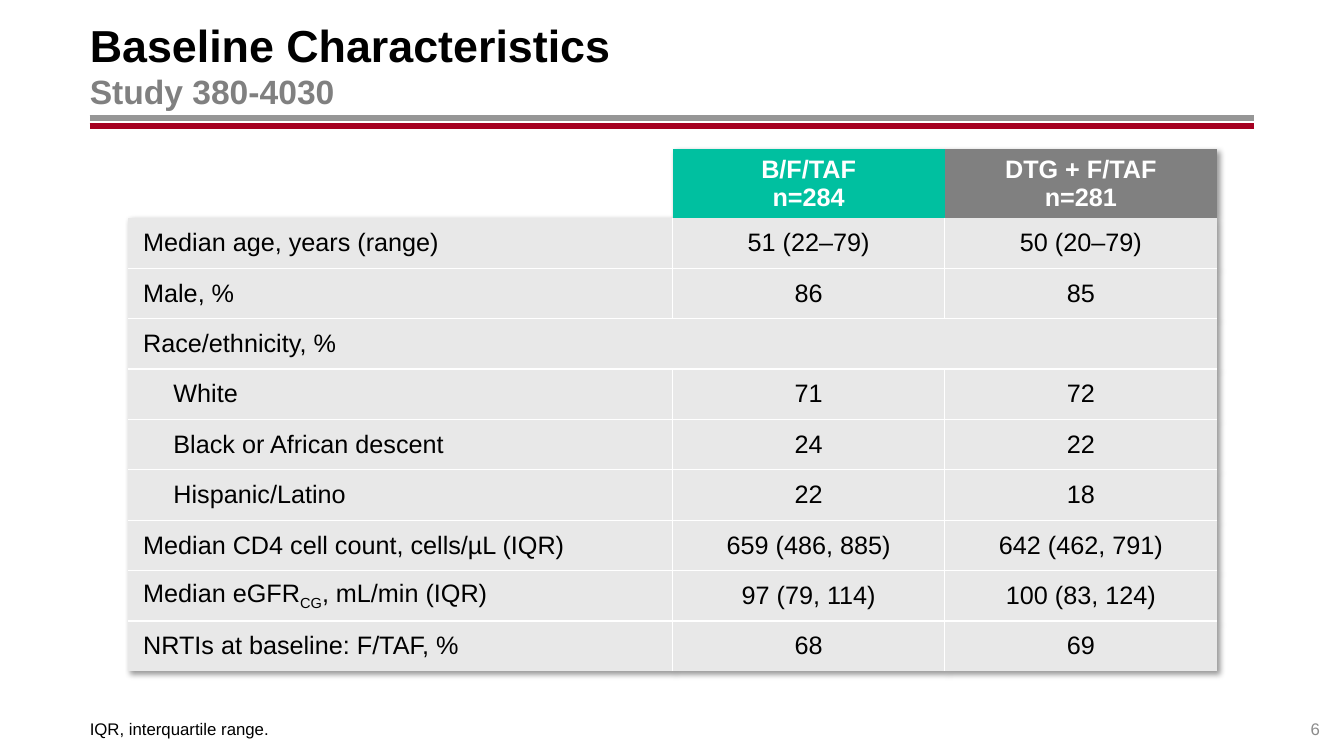
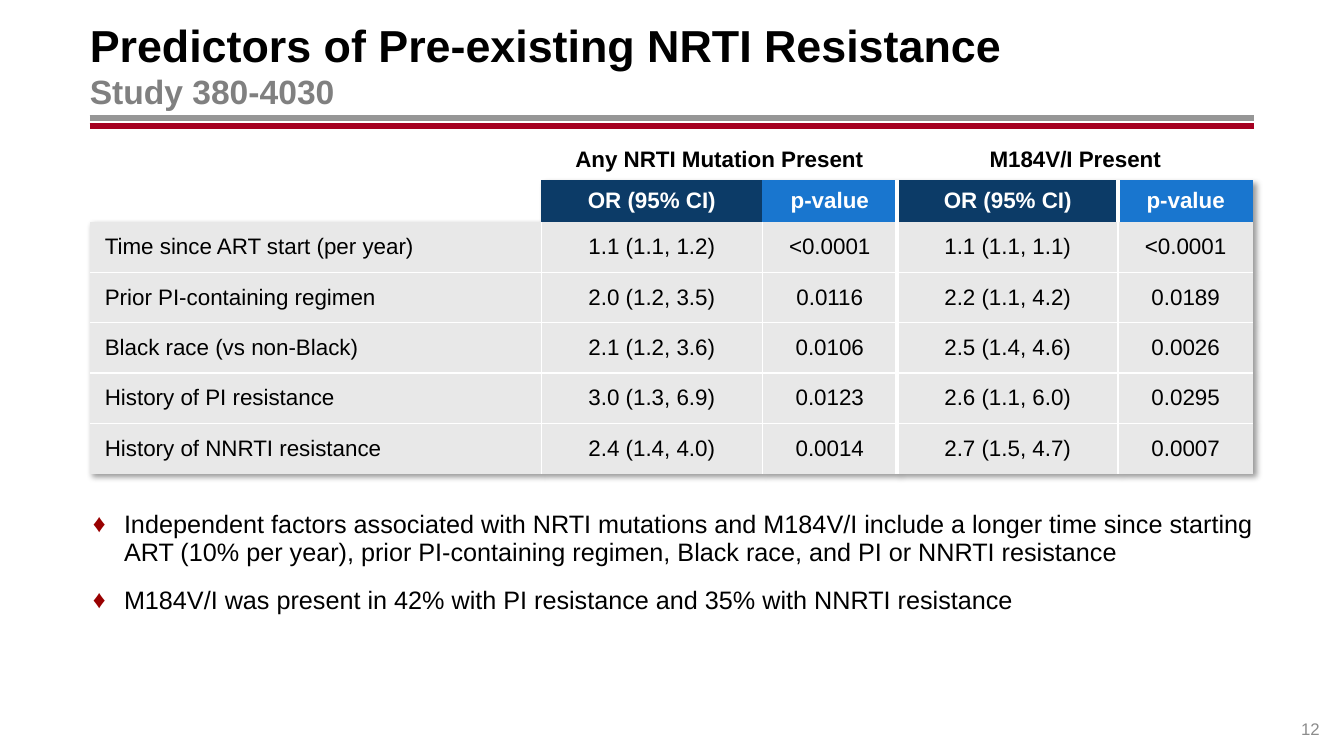
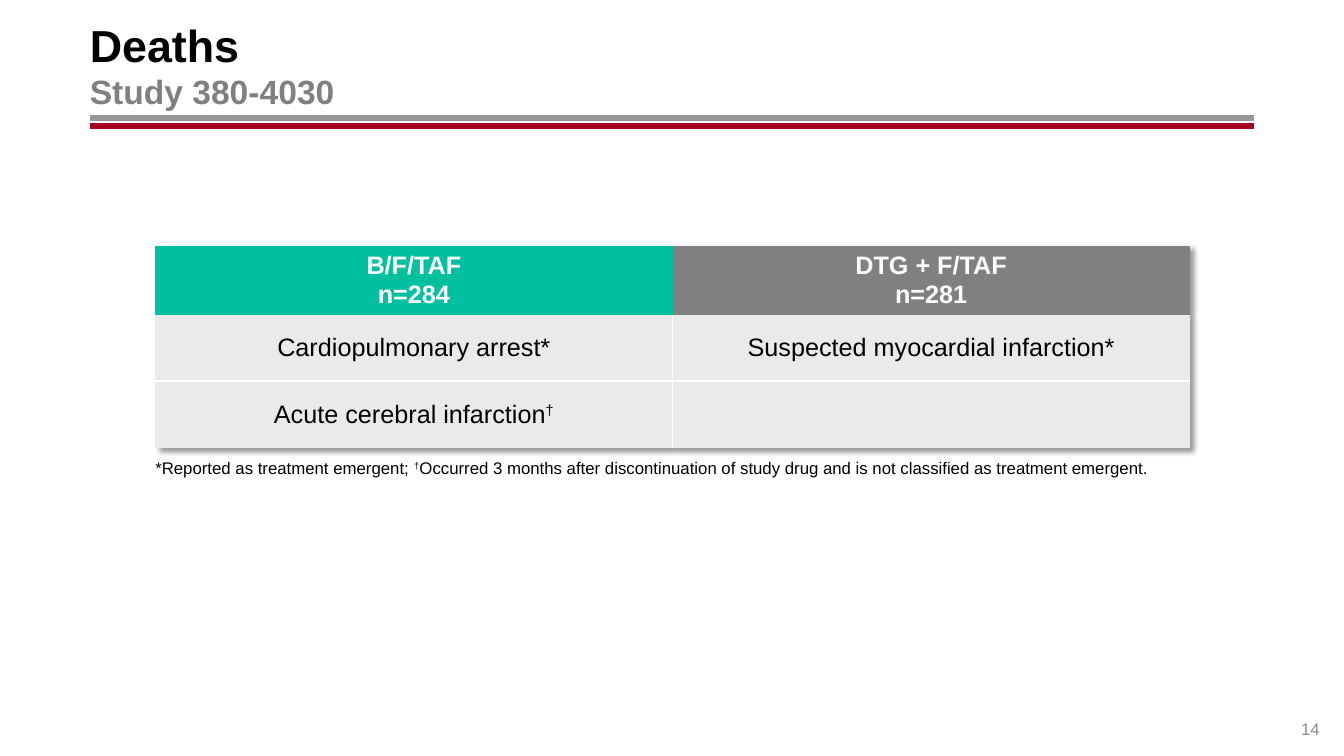
import dataclasses

import lxml.etree
import pptx
import pptx.dml.color
import pptx.enum.shapes
import pptx.enum.text
import pptx.oxml
import pptx.oxml.ns
import pptx.util

Inches = pptx.util.Inches
Pt = pptx.util.Pt
qn = pptx.oxml.ns.qn
ALIGN = pptx.enum.text.PP_ALIGN
ANCHOR = pptx.enum.text.MSO_ANCHOR


@dataclasses.dataclass(frozen=True)
class Theme:
    font: str = "Arial"
    text: str = "000000"
    white: str = "FFFFFF"
    gray: str = "808080"
    number: str = "8C8C8C"
    rule_gray: str = "969696"
    rule_red: str = "A50021"
    bullet: str = "990000"
    teal: str = "00C0A0"
    navy: str = "0C3B67"
    blue: str = "1976CF"
    cell: str = "E8E8E8"
    cell_light: str = "EAEAEA"
    title: int = 32
    subtitle: int = 24
    body: int = 18
    compact: int = 16
    note: int = 12
    rule: float = 4.25


@dataclasses.dataclass(frozen=True)
class Head:
    text: str = ""
    fill: str = ""
    span: int = 1


T = Theme()
LEFT, WIDTH = 0.89, 11.55
SUBTITLE = "Study 380-4030"
NO_STYLE = "{2D5ABB26-0587-4C30-8999-92F81FD0307C}"
ARMS = [Head("B/F/TAF\nn=284", T.teal), Head("DTG + F/TAF\nn=281", T.gray)]


def rgb(value):
    return pptx.dml.color.RGBColor.from_string(value)


def add_xml(parent, tag, **attrs):
    el = lxml.etree.SubElement(parent, qn(tag))
    for name, value in attrs.items():
        el.set(name, str(value))
    return el


def add_run(p, text, size, color, bold=False, baseline=0):
    r = p.add_run()
    r.text = text
    r.font.name = T.font
    r.font.size = Pt(size)
    r.font.bold = bold
    r.font.color.rgb = rgb(color)
    if baseline:
        r.font._element.set("baseline", str(baseline * 1000))


def add_runs(p, content, size, color, bold=False):
    runs = [(content, 0)] if isinstance(content, str) else content
    for text, baseline in runs:
        add_run(p, text, size, color, bold, baseline)


def add_text(slide, box, anchor=ANCHOR.TOP):
    sp = slide.shapes.add_textbox(*map(Inches, box))
    tf = sp.text_frame
    tf.word_wrap = True
    tf.vertical_anchor = anchor
    tf.margin_left = tf.margin_right = tf.margin_top = tf.margin_bottom = 0
    return tf


def add_note(slide, box, content):
    tf = add_text(slide, box, ANCHOR.BOTTOM)
    add_runs(tf.paragraphs[0], content, T.note, T.text)


def add_frame(prs, title, number):
    slide = prs.slides.add_slide(prs.slide_layouts[6])
    for y, color in ((1.17, T.rule_gray), (1.25, T.rule_red)):
        line = slide.shapes.add_connector(
            pptx.enum.shapes.MSO_CONNECTOR.STRAIGHT,
            Inches(LEFT), Inches(y), Inches(LEFT + WIDTH), Inches(y))
        line.line.color.rgb = rgb(color)
        line.line.width = Pt(T.rule)
        add_xml(line._element.spPr, "a:effectLst")
    p = add_text(slide, (LEFT, 0.2, WIDTH, 0.88), ANCHOR.MIDDLE).paragraphs[0]
    add_run(p, title, T.title, T.text, True)
    p.add_line_break()
    add_run(p, SUBTITLE, T.subtitle, T.gray, True)
    p = add_text(slide, (LEFT + WIDTH, 6.93, 0.65, 0.4), ANCHOR.BOTTOM).paragraphs[0]
    p.alignment = ALIGN.RIGHT
    add_run(p, str(number), T.note, T.number)
    return slide


def add_borders(cell, **widths):
    tcPr = cell._tc.get_or_add_tcPr()
    for side in "LRTB":
        if widths.get(side):
            ln = add_xml(tcPr, f"a:ln{side}", w=Pt(widths[side]))
            add_xml(add_xml(ln, "a:solidFill"), "a:srgbClr", val=T.white)


def fill_cell(cell, content, size, color, bold, align, fill, indent=0):
    cell.vertical_anchor = ANCHOR.MIDDLE
    cell.margin_left = cell.margin_right = Inches(0.15)
    cell.margin_top = cell.margin_bottom = Inches(0.04)
    if fill:
        cell.fill.solid()
        cell.fill.fore_color.rgb = rgb(fill)
    else:
        cell.fill.background()
    lines = content.split("\n") if isinstance(content, str) else [content]
    for i, line in enumerate(lines):
        p = cell.text_frame.add_paragraph() if i else cell.text_frame.paragraphs[0]
        p.alignment = align
        if indent:
            p._p.get_or_add_pPr().set("marL", str(Inches(indent)))
        if line:
            add_runs(p, line, size, color, bold)


def add_shadow(table):
    tblPr = table._tbl.tblPr
    tblPr.find(qn("a:tableStyleId")).text = NO_STYLE
    effects = lxml.etree.Element(qn("a:effectLst"))
    tblPr.insert(0, effects)
    shadow = add_xml(effects, "a:outerShdw", blurRad=Pt(4), dist=Pt(3),
                     dir=2700000, algn="tl", rotWithShape=0)
    add_xml(add_xml(shadow, "a:srgbClr", val=T.text), "a:alpha", val=40000)


def add_grid(slide, at, cols, head_height, row_height, heads, rows, size,
             fill=T.cell, label_align=ALIGN.LEFT, indented=(), split=None):
    heights = [head_height] * len(heads) + [row_height] * len(rows)
    table = slide.shapes.add_table(
        len(heights), len(cols), *map(Inches, (*at, sum(cols), sum(heights)))).table
    table.first_row = table.horz_banding = False
    add_shadow(table)
    for col, width in zip(table.columns, cols):
        col.width = Inches(width)
    for row, height in zip(table.rows, heights):
        row.height = Inches(height)

    def edge(c, base):
        if c in (0, len(cols)):
            return 0
        return 3 if c == split else base

    for y, head_row in enumerate(heads):
        x = 0
        for head in head_row:
            cell = table.cell(y, x)
            if head.span > 1:
                cell.merge(table.cell(y, x + head.span - 1))
            if head.fill:
                add_borders(cell, L=edge(x, 0), R=edge(x + 1, 0))
            fill_cell(cell, head.text, size, T.white if head.fill else T.text,
                      True, ALIGN.CENTER, head.fill)
            x += head.span

    for i, values in enumerate(rows):
        y = len(heads) + i
        span = len(cols) if len(values) == 1 else 1
        if span > 1:
            table.cell(y, 0).merge(table.cell(y, span - 1))
        for x, value in enumerate(values):
            cell = table.cell(y, x)
            add_borders(cell, L=edge(x, 1), R=edge(x + span, 1),
                        T=int(i > 0), B=int(i < len(rows) - 1))
            fill_cell(cell, value, size, T.text, False,
                      ALIGN.CENTER if x else label_align, fill,
                      0.3 if x == 0 and value in indented else 0)


def add_bullets(slide, box, items):
    tf = add_text(slide, box)
    for i, item in enumerate(items):
        p = tf.add_paragraph() if i else tf.paragraphs[0]
        p.line_spacing = 0.9
        p.space_before = Pt(9)
        p.space_after = Pt(6)
        pPr = p._p.get_or_add_pPr()
        pPr.set("marL", str(Inches(0.31)))
        pPr.set("indent", str(Inches(-0.31)))
        add_xml(add_xml(pPr, "a:buClr"), "a:srgbClr", val=T.bullet)
        add_xml(pPr, "a:buFont", typeface=T.font)
        add_xml(pPr, "a:buChar", char="♦")
        add_runs(p, item, T.body, T.text)


def baseline_slide(prs):
    slide = add_frame(prs, "Baseline Characteristics", 6)
    races = ("White", "Black or African descent", "Hispanic/Latino")
    rows = [
        ("Median age, years (range)", "51 (22–79)", "50 (20–79)"),
        ("Male, %", "86", "85"),
        ("Race/ethnicity, %",),
        (races[0], "71", "72"),
        (races[1], "24", "22"),
        (races[2], "22", "18"),
        ("Median CD4 cell count, cells/µL (IQR)", "659 (486, 885)", "642 (462, 791)"),
        ([("Median eGFR", 0), ("CG", -25), (", mL/min (IQR)", 0)],
         "97 (79, 114)", "100 (83, 124)"),
        ("NRTIs at baseline: F/TAF, %", "68", "69"),
    ]
    add_grid(slide, (1.27, 1.48), (5.4, 2.7, 2.7), 0.66, 0.5,
             [[Head(), *ARMS]], rows, T.body, indented=races)
    add_note(slide, (LEFT, 6.83, WIDTH, 0.5), "IQR, interquartile range.")


def predictors_slide(prs):
    slide = add_frame(prs, "Predictors of Pre-existing NRTI Resistance", 12)
    measures = [Head("OR (95% CI)", T.navy), Head("p-value", T.blue)]
    heads = [
        [Head(), Head("Any NRTI Mutation Present", span=2), Head("M184V/I Present", span=2)],
        [Head(), *measures, *measures],
    ]
    rows = [
        ("Time since ART start (per year)", "1.1 (1.1, 1.2)", "<0.0001", "1.1 (1.1, 1.1)", "<0.0001"),
        ("Prior PI-containing regimen", "2.0 (1.2, 3.5)", "0.0116", "2.2 (1.1, 4.2)", "0.0189"),
        ("Black race (vs non-Black)", "2.1 (1.2, 3.6)", "0.0106", "2.5 (1.4, 4.6)", "0.0026"),
        ("History of PI resistance", "3.0 (1.3, 6.9)", "0.0123", "2.6 (1.1, 6.0)", "0.0295"),
        ("History of NNRTI resistance", "2.4 (1.4, 4.0)", "0.0014", "2.7 (1.5, 4.7)", "0.0007"),
    ]
    add_grid(slide, (LEFT, 1.38), (4.48, 2.19, 1.34, 2.19, 1.34), 0.41, 0.5,
             heads, rows, T.compact, split=3)
    add_bullets(slide, (0.92, 5.08, 11.58, 1.03), [
        "Independent factors associated with NRTI mutations and M184V/I include a longer "
        "time since starting ART (10% per year), prior PI-containing regimen, Black race, "
        "and PI or NNRTI resistance",
        "M184V/I was present in 42% with PI resistance and 35% with NNRTI resistance",
    ])


def deaths_slide(prs):
    slide = add_frame(prs, "Deaths", 14)
    rows = [
        ("Cardiopulmonary arrest*", "Suspected myocardial infarction*"),
        ([("Acute cerebral infarction", 0), ("†", 30)], ""),
    ]
    add_grid(slide, (1.54, 2.44), (5.13, 5.13), 0.66, 0.66, [ARMS], rows,
             T.body, fill=T.cell_light, label_align=ALIGN.CENTER)
    add_note(slide, (1.54, 4.42, 10.22, 0.32), [
        ("*Reported as treatment emergent; ", 0),
        ("†", 30),
        ("Occurred 3 months after discontinuation of study drug and is not "
         "classified as treatment emergent.", 0),
    ])


def main():
    prs = pptx.Presentation()
    prs.slide_width = Inches(13.33)
    prs.slide_height = Inches(7.5)
    for build in (baseline_slide, predictors_slide, deaths_slide):
        build(prs)
    prs.save("out.pptx")


if __name__ == "__main__":
    main()
